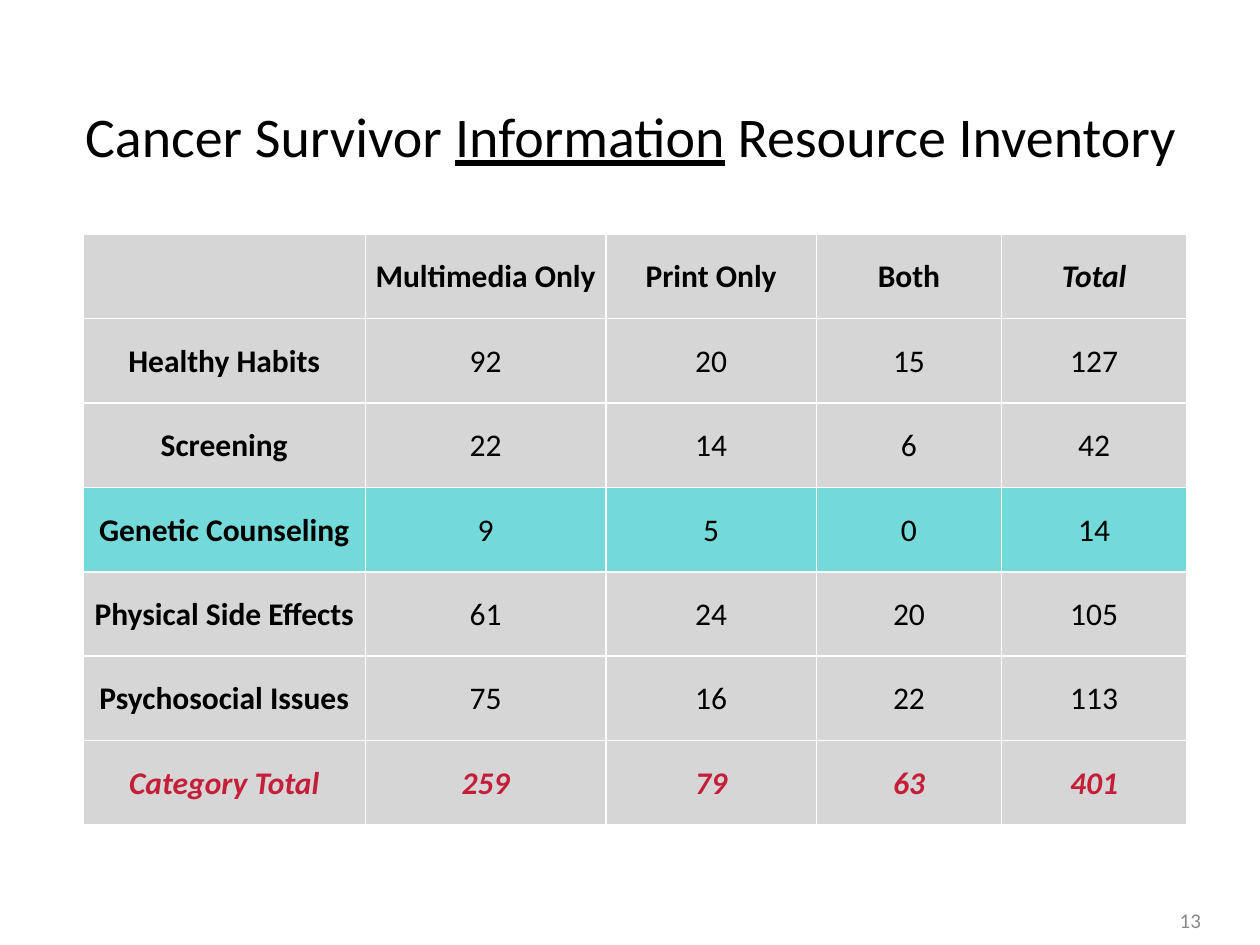
from dataclasses import dataclass

from lxml import etree
from pptx import Presentation
from pptx.dml.color import RGBColor
from pptx.enum.text import MSO_ANCHOR, PP_ALIGN
from pptx.oxml.ns import qn
from pptx.util import Inches, Pt

CENTER, RIGHT = PP_ALIGN.CENTER, PP_ALIGN.RIGHT
MIDDLE = MSO_ANCHOR.MIDDLE
FONT = "Calibri"
BLACK, WHITE, GREY, RED = "000000", "FFFFFF", "898989", "C41E3A"
CELL_GREY, HIGHLIGHT = "D6D6D6", "73DAD9"

HEADERS = ("", "Multimedia Only", "Print Only", "Both", "Total")
COL_WIDTHS = (2.24, 1.91, 1.67, 1.47, 1.47)
ROW_HEIGHT = 0.67


@dataclass
class Row:
    label: str
    counts: tuple[int, ...]
    fill: str = CELL_GREY
    color: str = BLACK
    is_total: bool = False


ROWS = (
    Row("Healthy Habits", (92, 20, 15, 127)),
    Row("Screening", (22, 14, 6, 42)),
    Row("Genetic Counseling", (9, 5, 0, 14), fill=HIGHLIGHT),
    Row("Physical Side Effects", (61, 24, 20, 105)),
    Row("Psychosocial Issues", (75, 16, 22, 113)),
    Row("Category Total", (259, 79, 63, 401), color=RED, is_total=True),
)


def rgb(color: str) -> RGBColor:
    return RGBColor.from_string(color)


def add_run(p, text: str, *, size=18, color=BLACK, bold=False, italic=False,
            underline=False) -> None:
    r = p.add_run()
    r.text = text
    font = r.font
    font.name, font.size, font.color.rgb = FONT, Pt(size), rgb(color)
    font.bold, font.italic, font.underline = bold, italic, underline


def add_text_box(s, left: float, top: float, width: float, height: float, align):
    """Add a middle-anchored text box and return its paragraph."""
    sp = s.shapes.add_textbox(Inches(left), Inches(top), Inches(width), Inches(height))
    tf = sp.text_frame
    tf.word_wrap = True
    tf.vertical_anchor = MIDDLE
    p = tf.paragraphs[0]
    p.alignment = align
    return p


def set_borders(cell, color: str) -> None:
    tc_pr = cell._tc.get_or_add_tcPr()
    for i, side in enumerate(("lnL", "lnR", "lnT", "lnB")):
        ln = etree.Element(qn(f"a:{side}"), w=str(Pt(1)))
        fill = etree.SubElement(ln, qn("a:solidFill"))
        etree.SubElement(fill, qn("a:srgbClr"), val=color)
        tc_pr.insert(i, ln)


def fill_cell(cell, text: str, fill: str, **fmt) -> None:
    cell.margin_left = cell.margin_right = cell.margin_top = Inches(0.01)
    cell.margin_bottom = 0
    cell.vertical_anchor = MIDDLE
    cell.fill.solid()
    cell.fill.fore_color.rgb = rgb(fill)
    set_borders(cell, WHITE)
    p = cell.text_frame.paragraphs[0]
    p.alignment = CENTER
    if text:
        add_run(p, text, **fmt)


def add_inventory_table(s) -> None:
    n_rows = len(ROWS) + 1
    table = s.shapes.add_table(
        n_rows, len(HEADERS), Inches(0.66), Inches(1.86),
        Inches(sum(COL_WIDTHS)), Inches(ROW_HEIGHT * n_rows)).table
    for col, width in zip(table.columns, COL_WIDTHS):
        col.width = Inches(width)
    for row in table.rows:
        row.height = Inches(ROW_HEIGHT)

    for j, header in enumerate(HEADERS):
        fill_cell(table.cell(0, j), header, CELL_GREY, bold=True,
                  italic=header == "Total")
    for i, row in enumerate(ROWS, start=1):
        for j, value in enumerate((row.label, *row.counts)):
            fill_cell(table.cell(i, j), str(value), row.fill, color=row.color,
                      bold=j == 0 or row.is_total, italic=row.is_total)


def main() -> None:
    prs = Presentation()
    prs.slide_width, prs.slide_height = Inches(10), Inches(7.5)
    s = prs.slides.add_slide(prs.slide_layouts[6])

    # Title
    p = add_text_box(s, 0.38, 0.56, 9.25, 1.02, CENTER)
    add_run(p, "Cancer Survivor ", size=32)
    add_run(p, "Information", size=32, underline=True)
    add_run(p, " Resource Inventory", size=32)

    # Slide number
    p = add_text_box(s, 7.17, 7.1, 2.46, 0.4, RIGHT)
    add_run(p, "13", size=12, color=GREY)

    # Resource counts
    add_inventory_table(s)

    prs.save("out.pptx")


if __name__ == "__main__":
    main()
